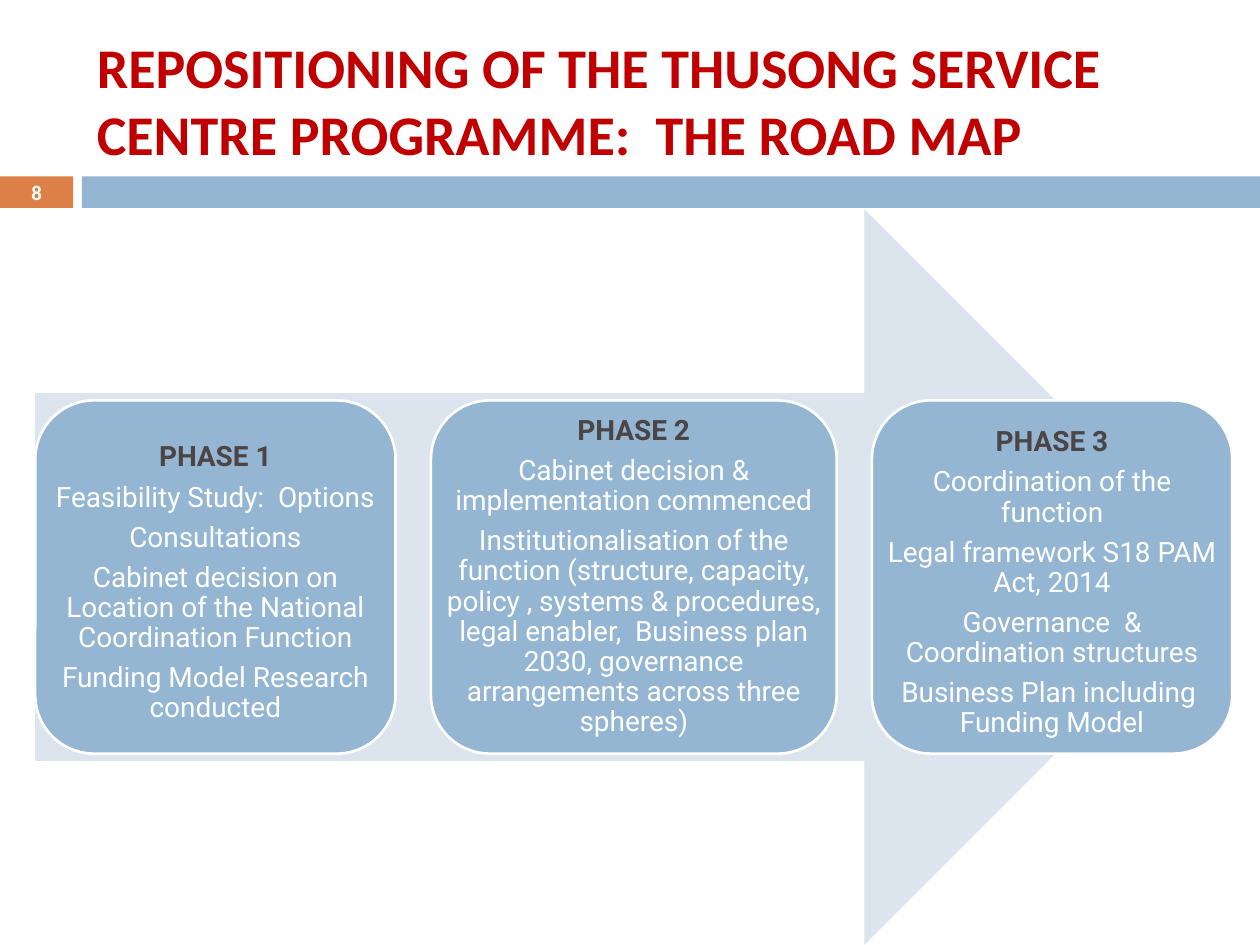
from pptx import Presentation
from pptx.dml.color import RGBColor
from pptx.enum.shapes import MSO_SHAPE
from pptx.enum.text import MSO_ANCHOR, PP_ALIGN
from pptx.util import Inches, Pt

RECT = MSO_SHAPE.RECTANGLE
ROUNDED = MSO_SHAPE.ROUNDED_RECTANGLE
ARROW = MSO_SHAPE.RIGHT_ARROW
MIDDLE = MSO_ANCHOR.MIDDLE
LEFT, CENTER = PP_ALIGN.LEFT, PP_ALIGN.CENTER

RED = RGBColor(0xC0, 0x00, 0x00)
ORANGE = RGBColor(0xDD, 0x80, 0x47)
BLUE = RGBColor(0x94, 0xB6, 0xD2)
PALE_BLUE = RGBColor(0xDC, 0xE5, 0xEE)
DARK = RGBColor(0x4C, 0x45, 0x45)
WHITE = RGBColor(0xFF, 0xFF, 0xFF)

SLIDE_W, SLIDE_H = 10, 7.5
PHASE_SIZE = 16
PHASE_INSET = 0.07
PHASE_GAP = 0.28

# Heading, points, relative width, and how far the text sits below the middle
PHASES = [
    ("PHASE 1", [
        "Feasibility Study:  Options",
        "Consultations",
        "Cabinet decision on Location of the National Coordination Function",
        "Funding Model Research conducted",
    ], 2.86, 0.05),
    ("PHASE 2", [
        "Cabinet decision & implementation commenced",
        "Institutionalisation of the function (structure, capacity, policy , "
        "systems & procedures, legal enabler,  Business plan 2030, governance "
        "arrangements across three spheres)",
    ], 3.22, 0),
    ("PHASE 3", [
        "Coordination of the function",
        "Legal framework S18 PAM Act, 2014",
        "Governance  & Coordination structures",
        "Business Plan including  Funding Model",
    ], 2.86, 0.05),
]


def add_block(slide, kind, box, fill, outline=None):
    block = slide.shapes.add_shape(kind, *map(Inches, box))
    block.shadow.inherit = False
    block.fill.solid()
    block.fill.fore_color.rgb = fill
    if outline is None:
        block.line.fill.background()
    else:
        block.line.color.rgb = outline
        block.line.width = Pt(1.5)
    return block


def add_text_frame(slide, box, inset_x, inset_y):
    frame = slide.shapes.add_textbox(*map(Inches, box)).text_frame
    frame.word_wrap = True
    frame.vertical_anchor = MIDDLE
    frame.margin_left = frame.margin_right = Inches(inset_x)
    frame.margin_top = frame.margin_bottom = Inches(inset_y)
    return frame


def write(paragraph, text, face, size, color, bold=False, align=CENTER):
    paragraph.text = text
    paragraph.alignment = align
    font = paragraph.font
    font.name, font.size, font.bold = face, Pt(size), bold
    font.color.rgb = color


def add_header(slide, box):
    """Title above a band that holds the slide number."""
    left, top, width, height = box
    band_h, number_w, band_left = 0.25, 0.58, 0.65
    band_top = top + height - band_h

    # Band
    number_box = (left, band_top, number_w, band_h)
    add_block(slide, RECT, number_box, ORANGE)
    add_block(slide, RECT,
              (left + band_left, band_top, width - band_left, band_h), BLUE)
    number = add_text_frame(slide, number_box, 0, 0)
    write(number.paragraphs[0], "8", "Calibri", 11.9, WHITE, bold=True)

    # Title
    title = add_text_frame(slide, (left + 0.67, top + 0.25, 8.92, 1.08), 0.1, 0.05)
    write(title.paragraphs[0],
          "REPOSITIONING OF THE THUSONG SERVICE CENTRE PROGRAMME:  THE ROAD MAP",
          "Calibri", 32, RED, bold=True, align=LEFT)


def add_phase(slide, box, heading, points, drop):
    add_block(slide, ROUNDED, box, BLUE, outline=WHITE)
    left, top, width, height = box
    frame = add_text_frame(slide, (left, top + drop, width, height),
                           PHASE_INSET, PHASE_INSET)
    for index, text in enumerate([heading, *points]):
        is_heading = index == 0
        paragraph = frame.paragraphs[0] if is_heading else frame.add_paragraph()
        write(paragraph, text, "Roboto", PHASE_SIZE,
              DARK if is_heading else WHITE, bold=is_heading)
        paragraph.line_spacing = 0.9
        paragraph.space_after = Pt(0.35 * PHASE_SIZE)


def add_road_map(slide, box):
    """Wide arrow with the phases in a row across its shaft."""
    left, top, width, height = box
    add_block(slide, ARROW, box, PALE_BLUE)

    phase_h = 0.48 * height
    phase_top = top + (height - phase_h) / 2
    total_share = sum(share for _, _, share, _ in PHASES)
    scale = (width - PHASE_GAP * (len(PHASES) - 1)) / total_share
    for heading, points, share, drop in PHASES:
        phase_w = share * scale
        add_phase(slide, (left, phase_top, phase_w, phase_h),
                  heading, points, drop)
        left += phase_w + PHASE_GAP


def main():
    deck = Presentation()
    deck.slide_width, deck.slide_height = Inches(SLIDE_W), Inches(SLIDE_H)
    slide = deck.slides.add_slide(deck.slide_layouts[6])
    add_header(slide, (0, 0, SLIDE_W, 1.65))
    add_road_map(slide, (0.28, 1.66, 9.5, SLIDE_H - 1.66))
    deck.save("out.pptx")


if __name__ == "__main__":
    main()
